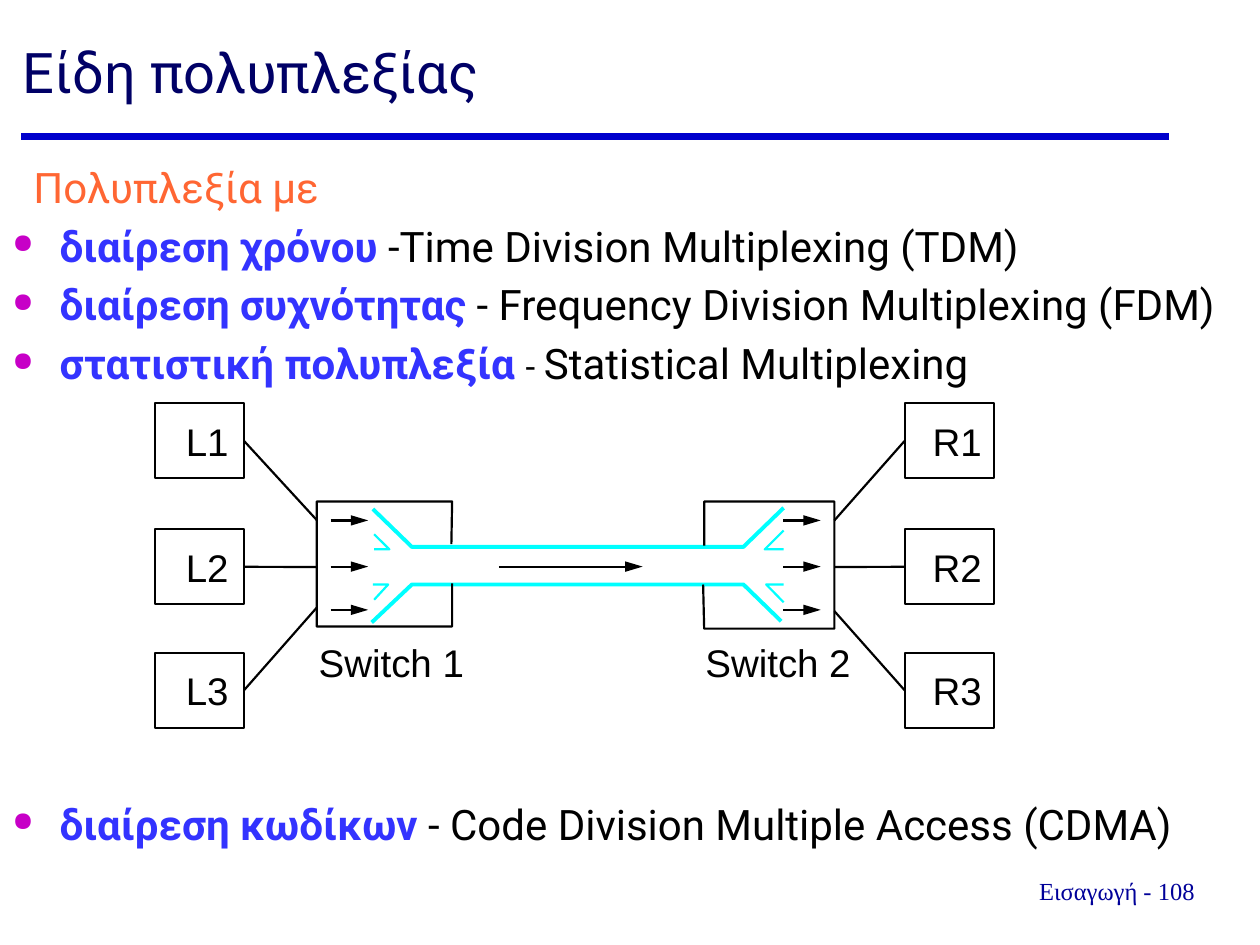
from lxml.etree import SubElement
from pptx import Presentation
from pptx.dml.color import RGBColor
from pptx.enum.shapes import MSO_CONNECTOR, MSO_SHAPE
from pptx.enum.text import MSO_ANCHOR, MSO_AUTO_SIZE, PP_ALIGN
from pptx.oxml.ns import qn
from pptx.util import Pt

# Theme: colours, line widths and type styles
THEME = {
    "rule": ("0000CC", 4),
    "outline": ("000000", 1.25),
    "channel": ("00FFFF", 2.25),
    "tick": ("00FFFF", 1.25),
    "bullet": "C700C7",
    "title": ("Roboto", 32, "000066", False),
    "heading": ("Roboto", 24, "FF6633", False),
    "term": ("Roboto", 24, "3333FF", True),
    "body": ("Roboto", 24, "000000", False),
    "dash": ("Roboto", 20, "000000", False),
    "label": ("Arial", 22, "000000", False),
    "footer": ("Times New Roman", 14, "000099", False),
}

# Content: each paragraph is a list of (text, style) runs
TITLE = "Είδη πολυπλεξίας"
FOOTER = "Εισαγωγή - 108"
HEADING = [("Πολυπλεξία με", "heading")]
KINDS = [
    [("διαίρεση χρόνου", "term"), (" -Time Division Multiplexing (TDM)", "body")],
    [("διαίρεση συχνότητας", "term"),
     (" - Frequency Division Multiplexing (FDM)", "body")],
    [("στατιστική πολυπλεξία ", "term"), ("- ", "dash"),
     ("Statistical Multiplexing", "body")],
]
LAST_KIND = [("διαίρεση κωδίκων", "term"),
             (" - Code Division Multiple Access (CDMA)", "body")]

# Diagram geometry: node columns, link ends and arrows per side
NODE_SIZE = (51, 43)
NODE_TOPS = (230.4, 302.4, 373)
ARROW_ROWS = (297.4, 323.8, 348.5)
ARROW_LENGTH = 21.4
SIDES = [
    {"prefix": "L", "node_left": 88.4, "link_from": 139.4, "link_to": 181.2,
     "link_rows": (297.4, 324, 347), "arrow_left": 189},
    {"prefix": "R", "node_left": 517, "link_from": 517, "link_to": 476.8,
     "link_rows": (297.4, 324, 349.2), "arrow_left": 447.6},
]
SWITCHES = [
    ("Switch 1", 182.2, [(258, 311), (258.4, 286.6), (181, 286.6), (181, 358),
                         (258.4, 358), (258.4, 333.4)]),
    ("Switch 2", 403.2, [(401.8, 334), (402.4, 359.2), (476.8, 359.2),
                         (476.8, 286.6), (402.4, 286.6), (402.4, 311.8)]),
]
CHANNELS = [
    [(213.1, 290.9), (235.4, 312.5), (424.8, 312.5), (447.8, 290.2)],
    [(446.4, 355), (424.8, 334), (235.4, 334), (212.4, 355.7)],
]
TICKS = [
    [(213.8, 313.9), (222.5, 313.9), (213.8, 305.3)],
    [(213.1, 334), (221.8, 334), (213.8, 342.7)],
    [(447.8, 313.9), (437, 313.9), (447.8, 303.1)],
    [(447.8, 334), (437.8, 334), (447.8, 344.2)],
]


def set_all(target, values):
    for name, value in values.items():
        setattr(target, name, value)


def style_line(line, style):
    color, width = THEME[style]
    line.color.rgb = RGBColor.from_string(color)
    line.width = Pt(width)


def add_run(paragraph, text, style):
    name, size, color, bold = THEME[style]
    run = paragraph.add_run()
    run.text = text
    set_all(run.font, {"name": name, "size": Pt(size), "bold": bold})
    run.font.color.rgb = RGBColor.from_string(color)


def set_frame(frame, margins=(7.2, 3.6, 7.2, 3.6), anchor=MSO_ANCHOR.TOP, wrap=True):
    left, top, right, bottom = map(Pt, margins)
    set_all(frame, {"margin_left": left, "margin_top": top, "margin_right": right,
                    "margin_bottom": bottom, "vertical_anchor": anchor,
                    "word_wrap": wrap, "auto_size": MSO_AUTO_SIZE.NONE})


def add_text(slide, box, text, style, **frame_format):
    frame = slide.shapes.add_textbox(*map(Pt, box)).text_frame
    set_frame(frame, **frame_format)
    frame.paragraphs[0].alignment = PP_ALIGN.CENTER
    add_run(frame.paragraphs[0], text, style)


def format_list_item(paragraph, bulleted):
    properties = paragraph._p.get_or_add_pPr()
    margin, indent = (27, -27) if bulleted else (12, 0)
    properties.set("marL", str(Pt(margin)))
    properties.set("indent", str(Pt(indent)))
    SubElement(SubElement(properties, qn("a:spcBef")), qn("a:spcPct"), val="20000")
    if bulleted:
        SubElement(SubElement(properties, qn("a:buClr")), qn("a:srgbClr"),
                   val=THEME["bullet"])
        SubElement(properties, qn("a:buSzPct"), val="64000")
        SubElement(properties, qn("a:buChar"), char="●")


def add_list(slide, box, items):
    frame = slide.shapes.add_textbox(*map(Pt, box)).text_frame
    set_frame(frame)
    for index, runs in enumerate(items):
        paragraph = frame.add_paragraph() if index else frame.paragraphs[0]
        format_list_item(paragraph, bulleted=runs is not HEADING)
        for text, style in runs:
            add_run(paragraph, text, style)


def add_line(slide, start, end, style="outline", arrow=False):
    connector = slide.shapes.add_connector(
        MSO_CONNECTOR.STRAIGHT, *map(Pt, (*start, *end)))
    style_line(connector.line, style)
    if arrow:
        SubElement(connector.line._get_or_add_ln(), qn("a:tailEnd"),
                   type="triangle", w="med", len="lg")
    SubElement(connector._element.spPr, qn("a:effectLst"))


def add_outline(slide, points, style):
    (left, top), *rest = [tuple(map(Pt, point)) for point in points]
    builder = slide.shapes.build_freeform(left, top)
    builder.add_line_segments(rest, close=False)
    shape = builder.convert_to_shape()
    shape.shadow.inherit = False
    shape.fill.background()
    style_line(shape.line, style)


def add_node(slide, left, top, text):
    shape = slide.shapes.add_shape(
        MSO_SHAPE.RECTANGLE, *map(Pt, (left, top, *NODE_SIZE)))
    shape.shadow.inherit = False
    shape.fill.background()
    style_line(shape.line, "outline")
    set_frame(shape.text_frame, margins=(9, 0, 0, 0), anchor=MSO_ANCHOR.MIDDLE)
    paragraph = shape.text_frame.paragraphs[0]
    paragraph.alignment = PP_ALIGN.CENTER
    add_run(paragraph, text, "label")


def add_diagram(slide):
    # Shared channel between the switches
    for points in CHANNELS:
        add_outline(slide, points, "channel")
    for points in TICKS:
        add_outline(slide, points, "tick")
    add_line(slide, (285.1, 323.8), (367.2, 323.8), arrow=True)
    # Switches with their captions
    for name, left, points in SWITCHES:
        add_outline(slide, points, "outline")
        add_text(slide, (left, 365, 82.8, 26.6), name, "label",
                 margins=(0, 0, 0, 0), wrap=False)
    # Nodes, links and flow arrows
    for side in SIDES:
        rows = zip(NODE_TOPS, side["link_rows"], ARROW_ROWS)
        for number, (top, link_row, arrow_row) in enumerate(rows, 1):
            add_node(slide, side["node_left"], top, f"{side['prefix']}{number}")
            add_line(slide, (side["link_from"], top + NODE_SIZE[1] / 2),
                     (side["link_to"], link_row))
            add_line(slide, (side["arrow_left"], arrow_row),
                     (side["arrow_left"] + ARROW_LENGTH, arrow_row), arrow=True)


def main():
    presentation = Presentation()
    set_all(presentation, {"slide_width": Pt(720), "slide_height": Pt(540)})
    slide = presentation.slides.add_slide(presentation.slide_layouts[5])

    # Title and rule
    title = slide.shapes.title
    set_all(title, {"left": Pt(5.8), "top": Pt(18), "width": Pt(696), "height": Pt(60.5)})
    set_frame(title.text_frame)
    title.text_frame.paragraphs[0].alignment = PP_ALIGN.LEFT
    add_run(title.text_frame.paragraphs[0], TITLE, "title")
    add_line(slide, (12.2, 77.8), (668.2, 77.8), "rule")

    # Lists above and below the diagram
    add_list(slide, (0, 88.6, 720, 140), [HEADING, *KINDS])
    add_list(slide, (0, 452.5, 720, 40), [LAST_KIND])
    add_diagram(slide)

    # Footer
    add_text(slide, (575.3, 496.8, 126, 24), FOOTER, "footer")
    presentation.save("out.pptx")


if __name__ == "__main__":
    main()
